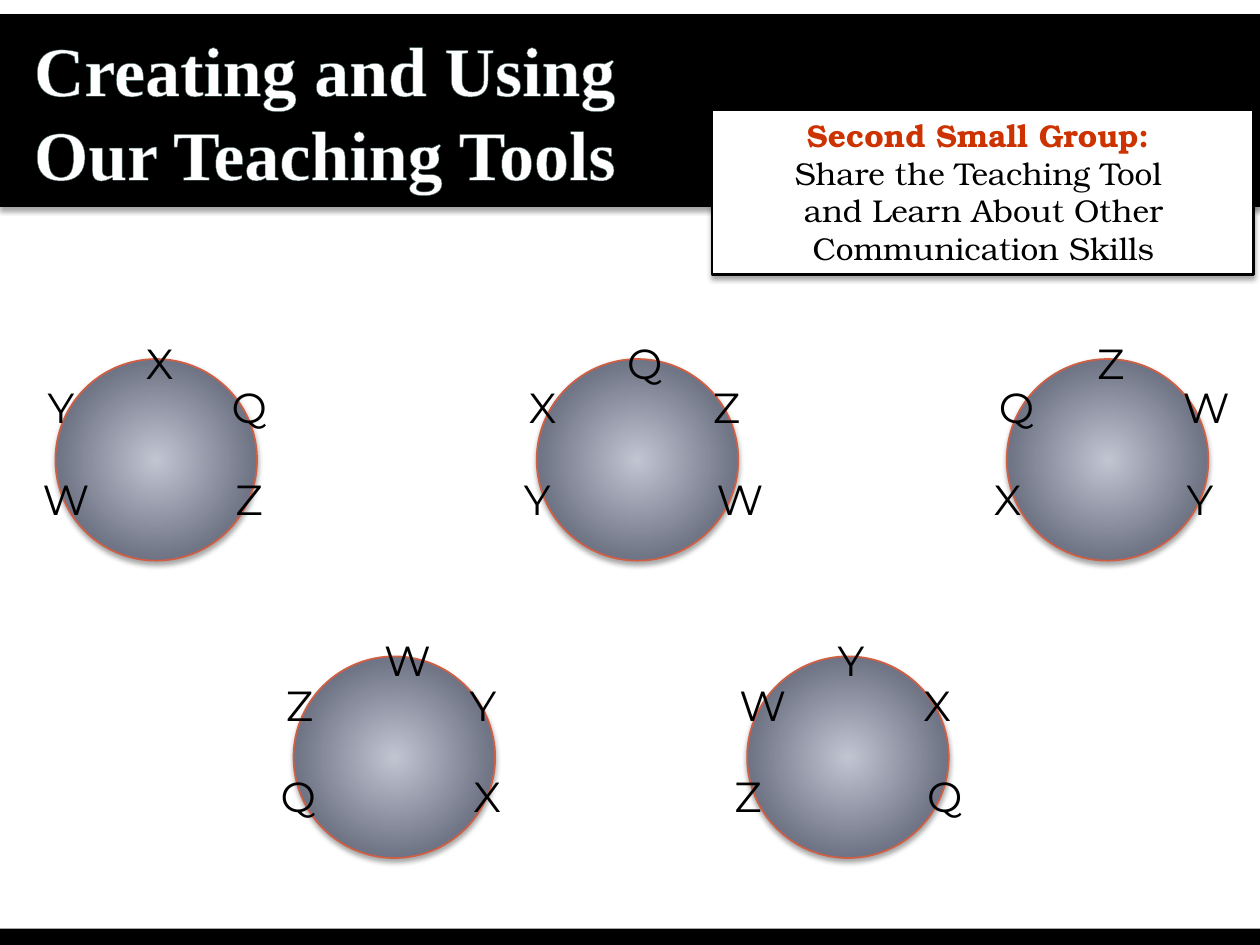
import pptx
import pptx.util
import pptx.dml.color
import pptx.enum.shapes
import pptx.enum.text
import pptx.oxml
import pptx.oxml.ns

KIND = pptx.enum.shapes.MSO_SHAPE
ALIGN = pptx.enum.text.PP_ALIGN
ANCHOR = pptx.enum.text.MSO_ANCHOR
NS = pptx.oxml.ns.nsdecls("a")
SCALE = 9144  # EMU per px, 100 px to the inch


def px(*sizes):
    return [size * SCALE for size in sizes]


def tint(code):
    return pptx.dml.color.RGBColor.from_string(code)


def xml(body):
    """Parse one DrawingML element, giving its root the namespace."""
    head, rest = body.split(" ", 1)
    return pptx.oxml.parse_xml(f"{head} {NS} {rest}")


def add_shape(shapes, kind, box, fill=None, line=None, width=1, shade=True):
    shape = shapes.add_shape(kind, *px(*box))
    if fill:
        shape.fill.solid()
        shape.fill.fore_color.rgb = tint(fill)
    if line:
        shape.line.color.rgb = tint(line)
        shape.line.width = pptx.util.Pt(width)
    else:
        shape.line.fill.background()
    shape.shadow.inherit = False
    if shade:
        shape._element.spPr.find(pptx.oxml.ns.qn("a:effectLst")).append(xml(
            '<a:outerShdw blurRad="39370" dist="22860" dir="5400000" '
            'rotWithShape="0"><a:srgbClr val="000000">'
            '<a:alpha val="35000"/></a:srgbClr></a:outerShdw>'))
    return shape


def add_text(shapes, box, runs, size, font, align=ALIGN.LEFT,
             anchor=ANCHOR.TOP, edge=None, space=None, top=5, foot=5):
    """Place runs of (text, colour, bold); a newline is a line break."""
    frame = shapes.add_textbox(*px(*box)).text_frame
    frame.word_wrap = True
    frame.vertical_anchor = anchor
    frame.margin_top, frame.margin_bottom = px(top, foot)
    para = frame.paragraphs[0]
    para.alignment = align
    if space:
        para.line_spacing = pptx.util.Pt(space)
    para.font.size = pptx.util.Pt(size)
    for text, color, bold in runs:
        for row, part in enumerate(text.split("\n")):
            if row:
                para.add_line_break()
            if not part:
                continue
            run = para.add_run()
            run.text = part
            run.font.size = pptx.util.Pt(size)
            run.font.name = font
            run.font.bold = bold
            run.font.color.rgb = tint(color)
            if edge:
                code, width = edge
                run.font._element.insert(0, xml(
                    f'<a:ln w="{int(width * 12700)}"><a:solidFill>'
                    f'<a:srgbClr val="{code}"/></a:solidFill></a:ln>'))


def add_head(shapes, box):
    """Black band with the slide title."""
    left, top, wide, high = box
    add_shape(shapes, KIND.RECTANGLE, box, "000000", "000000", 2.25)
    add_text(shapes, (left + 17, top + 8, 548, 125),
             [("Creating and Using \nOur Teaching Tools", "FFFFFF", True)],
             40, "Times New Roman", anchor=ANCHOR.MIDDLE,
             edge=("415B5C", 0.75), space=48, top=8, foot=0)


def add_note(shapes, box):
    """White box that names the group task."""
    left, top, wide, high = box
    add_shape(shapes, KIND.RECTANGLE, box, "FFFFFF", "000000", 1.5)
    add_text(shapes, (left + 12, top, wide - 23, high),
             [("Second Small Group: \n", "CC3300", True),
              ("Share the Teaching Tool \n"
               "and Learn About Other Communication Skills", "000000", False)],
             18, "TeX Gyre Bonum", align=ALIGN.CENTER)


# Letter places around a ring, clockwise from the top
SEATS = [(62, -22), (130, 13), (133, 86), (-20, 86), (-16, 13)]


def add_ring(shapes, left, top, names):
    """Round table with one letter at each seat."""
    group = shapes.add_group_shape().shapes
    disc = add_shape(group, KIND.OVAL, (left, top, 160, 160), line="D05F44")
    disc.fill.gradient()
    stops = disc.fill.gradient_stops
    for stop, color, place in zip(stops, ("C0C3D0", "4B5064"), (0.01, 1)):
        stop.color.rgb = tint(color)
        stop.position = place
    grad = disc._element.spPr.find(pptx.oxml.ns.qn("a:gradFill"))
    grad.replace(grad.find(pptx.oxml.ns.qn("a:lin")), xml(
        '<a:path path="circle"><a:fillToRect l="50000" t="50000" '
        'r="50000" b="50000"/></a:path>'))
    for name, (across, down) in zip(names, SEATS):
        add_text(group, (left + across, top + down, 36, 50),
                 [(name, "000000", False)], 24, "Montserrat",
                 edge=("FFFFFF", 1))


def main():
    deck = pptx.Presentation()
    deck.slide_width, deck.slide_height = px(1000, 750)
    shapes = deck.slides.add_slide(deck.slide_layouts[6]).shapes

    add_head(shapes, (0, 13, 1008, 150))
    add_note(shapes, (565, 87, 430, 131))

    # Each ring starts one letter further on than the ring before
    names = "XQZWY"
    places = [(44, 285), (426, 285), (799, 285), (233, 521), (593, 521)]
    starts = [0, 1, 2, 3, 4]
    for (left, top), start in zip(places, starts):
        add_ring(shapes, left, top, names[start:] + names[:start])

    # Bottom bar
    add_shape(shapes, KIND.RECTANGLE, (0, 737, 1008, 13), "000000",
              shade=False)
    deck.save("out.pptx")


if __name__ == "__main__":
    main()
